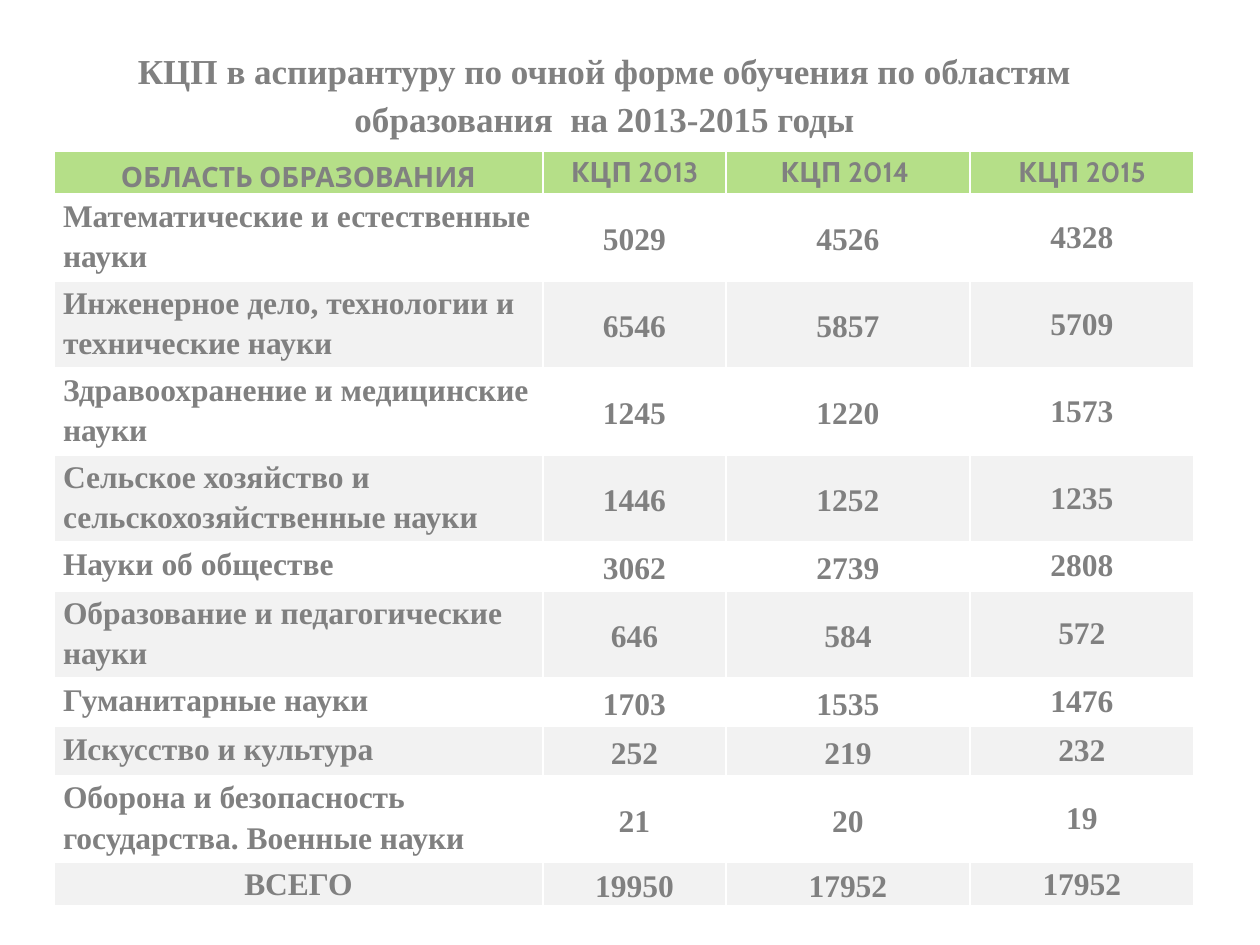
from lxml import etree
from pptx import Presentation
from pptx.dml.color import RGBColor
from pptx.enum.text import MSO_ANCHOR, MSO_AUTO_SIZE, PP_ALIGN
from pptx.oxml.ns import qn
from pptx.util import Pt

PX = 914400 // 126
LEFT, CENTER = PP_ALIGN.LEFT, PP_ALIGN.CENTER
TOP, MIDDLE, BOTTOM = MSO_ANCHOR.TOP, MSO_ANCHOR.MIDDLE, MSO_ANCHOR.BOTTOM
GROW = MSO_AUTO_SIZE.SHAPE_TO_FIT_TEXT
SERIF, SANS = "Times New Roman", "Cabin"
COLORS = {"text": "808080", "header": "92D050", "band": "F2F2F2", "white": "FFFFFF"}

TITLE = "КЦП в аспирантуру по очной форме обучения по областям образования  на 2013-2015 годы"
HEADER = ("ОБЛАСТЬ ОБРАЗОВАНИЯ", "КЦП 2013", "КЦП 2014 ", "КЦП 2015")
ROWS = [
    ("Математические и естественные науки", 5029, 4526, 4328),
    ("Инженерное дело, технологии и технические науки", 6546, 5857, 5709),
    ("Здравоохранение и медицинские науки", 1245, 1220, 1573),
    ("Сельское хозяйство и сельскохозяйственные науки", 1446, 1252, 1235),
    ("Науки об обществе", 3062, 2739, 2808),
    ("Образование и педагогические науки", 646, 584, 572),
    ("Гуманитарные науки", 1703, 1535, 1476),
    ("Искусство и культура", 252, 219, 232),
    ("Оборона и безопасность государства. Военные науки", 21, 20, 19),
    ("ВСЕГО", 19950, 17952, 17952),
]
COL_WIDTHS = (489, 183, 244, 224)
HEADER_H, ONE_LINE_H, TWO_LINE_H, TOTAL_H = 43, 49, 87, 42
ONE_LINE_CHARS = 22


def write(tf, text, size=18, font=SERIF, align=CENTER, spacing=None, after=None):
    p = tf.paragraphs[0]
    p.alignment = align
    if spacing:
        p.line_spacing = spacing
    if after is not None:
        p.space_after = Pt(after)
    r = p.add_run()
    r.text = text
    r.font.size, r.font.name, r.font.bold = Pt(size), font, True
    r.font.color.rgb = RGBColor.from_string(COLORS["text"])


def add_title(slide, x, y, w, h):
    title = slide.shapes.title
    title.left, title.top, title.width, title.height = (v * PX for v in (x, y, w, h))
    tf = title.text_frame
    tf.word_wrap, tf.auto_size, tf.vertical_anchor = True, GROW, TOP
    write(tf, TITLE, size=20, spacing=1.15, after=6)


def style_cell(cell, color, anchor, inset, alpha=None):
    cell.vertical_anchor = anchor
    cell.margin_left = cell.margin_right = inset * PX
    cell.margin_top = cell.margin_bottom = 0
    cell.fill.solid()
    cell.fill.fore_color.rgb = RGBColor.from_string(COLORS[color])
    tc_pr = cell._tc.get_or_add_tcPr()
    if alpha:
        rgb = tc_pr.find(".//" + qn("a:srgbClr"))
        etree.SubElement(rgb, qn("a:alpha"), val=str(alpha * 1000))
    # Borders come before the fill in the cell properties
    for i, side in enumerate(("a:lnL", "a:lnR", "a:lnT", "a:lnB")):
        ln = etree.Element(qn(side), w=str(Pt(1)))
        solid = etree.SubElement(ln, qn("a:solidFill"))
        etree.SubElement(solid, qn("a:srgbClr"), val=COLORS["white"])
        tc_pr.insert(i, ln)


def row_height(name):
    if name == ROWS[-1][0]:
        return TOTAL_H
    return ONE_LINE_H if len(name) <= ONE_LINE_CHARS else TWO_LINE_H


def add_quota_table(slide, x, y):
    heights = [HEADER_H] + [row_height(row[0]) for row in ROWS]
    box = (v * PX for v in (x, y, sum(COL_WIDTHS), sum(heights)))
    table = slide.shapes.add_table(len(heights), len(COL_WIDTHS), *box).table
    table.first_row = table.horz_banding = False
    for col, w in zip(table.columns, COL_WIDTHS):
        col.width = w * PX
    for row, h in zip(table.rows, heights):
        row.height = h * PX

    # Header row
    for c, text in enumerate(HEADER):
        cell = table.cell(0, c)
        style_cell(cell, "header", MIDDLE if c else BOTTOM, 1, alpha=68)
        write(cell.text_frame, text, size=16, font=SANS)

    # Fields of education and the total
    last_col = len(COL_WIDTHS) - 1
    for r, values in enumerate(ROWS, 1):
        for c, value in enumerate(values):
            cell = table.cell(r, c)
            style_cell(cell, "white" if r % 2 else "band",
                       MIDDLE if c else TOP, 1 if c == last_col else 9)
            align = LEFT if c == 0 and r < len(ROWS) else CENTER
            spread = {} if c == last_col else {"spacing": 1.15, "after": 10}
            write(cell.text_frame, str(value), align=align, **spread)


def main():
    prs = Presentation()
    prs.slide_width, prs.slide_height = 1260 * PX, 945 * PX
    slide = prs.slides.add_slide(prs.slide_layouts[5])
    add_title(slide, 54, 37, 1101, 107)
    add_quota_table(slide, 54, 151)
    prs.save("out.pptx")


if __name__ == "__main__":
    main()
